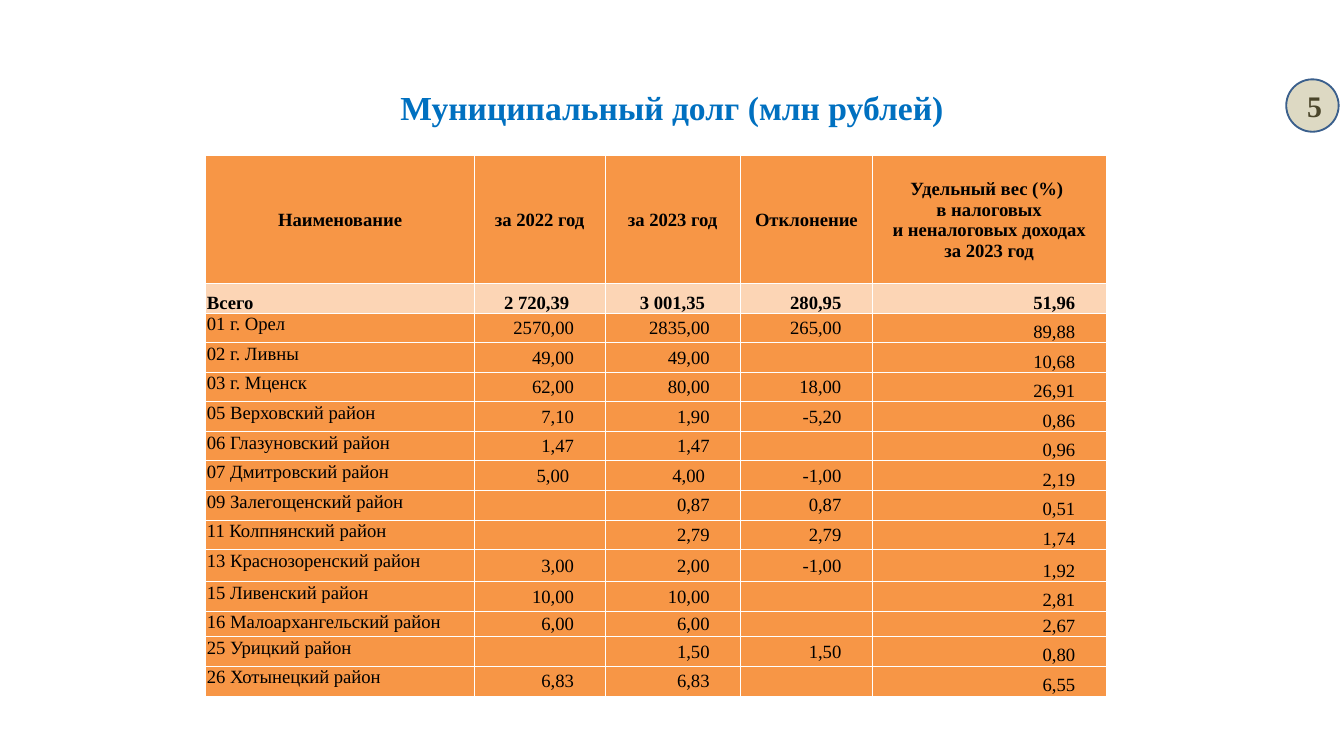
import pptx
import pptx.util
import pptx.dml.color
import pptx.enum.shapes
import pptx.enum.text
import pptx.oxml.ns
import lxml.etree

RGB = pptx.dml.color.RGBColor
ALIGN = pptx.enum.text.PP_ALIGN
ANCHOR = pptx.enum.text.MSO_ANCHOR
Inches = pptx.util.Inches
Pt = pptx.util.Pt
qn = pptx.oxml.ns.qn

FONT = "Times New Roman"
WHITE = RGB(0xFF, 0xFF, 0xFF)
BLACK = RGB(0x00, 0x00, 0x00)
BLUE = RGB(0x00, 0x70, 0xC0)
ORANGE = RGB(0xF7, 0x96, 0x46)
PEACH = RGB(0xFC, 0xD5, 0xB5)
BEIGE = RGB(0xDD, 0xD9, 0xC3)
BROWN = RGB(0x4A, 0x45, 0x2A)
NAVY = RGB(0x3A, 0x5F, 0x8C)

COLS = [2, 0.97, 1.01, 0.98, 1.74]
HEADER_HEIGHT = 0.95
ROW_HEIGHT = 0.22
SPECIAL_HEIGHTS = {10: 0.24, 12: 0.19}
HEADER = ["Наименование", "за 2022 год", "за 2023 год", "Отклонение",
          "Удельный вес (%) \vв налоговых\vи неналоговых доходах\vза 2023 год"]
ROWS = [
    ["Всего", "2 720,39 ", "3 001,35 ", "280,95", "51,96"],
    ["01 г. Орел", "2570,00", "2835,00", "265,00", "89,88"],
    ["02 г. Ливны", "49,00", "49,00", "", "10,68"],
    ["03 г. Мценск", "62,00", "80,00", "18,00", "26,91"],
    ["05 Верховский район", "7,10", "1,90", "-5,20", "0,86"],
    ["06 Глазуновский район", "1,47", "1,47", "", "0,96"],
    ["07 Дмитровский район", "5,00 ", "4,00 ", "-1,00", "2,19"],
    ["09 Залегощенский район", "", "0,87", "0,87", "0,51"],
    ["11 Колпнянский район", "", "2,79", "2,79", "1,74"],
    ["13 Краснозоренский район", "3,00", "2,00", "-1,00", "1,92"],
    ["15 Ливенский район", "10,00", "10,00", "", "2,81"],
    ["16 Малоархангельский район", "6,00", "6,00", "", "2,67"],
    ["25 Урицкий район", "", "1,50", "1,50", "0,80"],
    ["26 Хотынецкий район", "6,83", "6,83", "", "6,55"],
]


def write(tf, text, size=10, color=BLACK, bold=False, align=ALIGN.CENTER):
    """Write one formatted paragraph into a text frame."""
    p = tf.paragraphs[0]
    p.alignment = align
    for i, line in enumerate(text.split("\v")):
        if i:
            p.add_line_break()
        if line:
            r = p.add_run()
            r.text = line
            r.font.name = FONT
            r.font.size = Pt(size)
            r.font.bold = bold
            r.font.color.rgb = color
    end = lxml.etree.SubElement(p._p, qn("a:endParaRPr"))
    end.set("sz", str(size * 100))


def add_borders(cell, inner, color=WHITE, width=0.25):
    """Draw thin lines on the inner sides of a cell and none on the others."""
    tcPr = cell._tc.get_or_add_tcPr()
    for side in "LRTB":
        ln = lxml.etree.SubElement(tcPr, qn("a:ln" + side))
        ln.set("w", str(int(Pt(width))))
        if side in inner:
            fill = lxml.etree.SubElement(ln, qn("a:solidFill"))
            lxml.etree.SubElement(fill, qn("a:srgbClr")).set("val", str(color))
        else:
            lxml.etree.SubElement(ln, qn("a:noFill"))


def add_title(s, text, left, top, width, height):
    """Add the centred slide title."""
    tf = s.shapes.add_textbox(left, top, width, height).text_frame
    tf.word_wrap = True
    tf.auto_size = pptx.enum.text.MSO_AUTO_SIZE.SHAPE_TO_FIT_TEXT
    write(tf, text, size=18, color=BLUE, bold=True)


def add_page_number(s, text, left, top, width, height):
    """Add the round page number badge."""
    sp = s.shapes.add_shape(pptx.enum.shapes.MSO_SHAPE.OVAL, left, top, width, height)
    sp.shadow.inherit = False
    sp.fill.solid()
    sp.fill.fore_color.rgb = BEIGE
    sp.line.color.rgb = NAVY
    sp.line.width = Pt(1)
    sp.text_frame.vertical_anchor = ANCHOR.MIDDLE
    write(sp.text_frame, text, size=16, color=BROWN, bold=True)


def cell_format(row, col):
    """Return the anchor and alignment of a table cell."""
    if row == 0:
        return ANCHOR.MIDDLE, ALIGN.CENTER
    align = ALIGN.RIGHT if col else ALIGN.LEFT
    if row == 1 or col == len(COLS) - 1:
        return ANCHOR.BOTTOM, align
    return (ANCHOR.MIDDLE if col else ANCHOR.TOP), align


def inner_sides(row, col):
    """Return the sides of a cell that touch another cell."""
    return ("L" * (col > 0) + "R" * (col < len(COLS) - 1)
            + "T" * (row > 0) + "B" * (row < len(ROWS)))


def add_debt_table(s, left, top, width, height):
    """Add the municipal debt table, scaled to its box."""
    data = [HEADER] + ROWS
    heights = [HEADER_HEIGHT] + [SPECIAL_HEIGHTS.get(i, ROW_HEIGHT)
                                 for i in range(1, len(data))]
    table = s.shapes.add_table(len(data), len(COLS), left, top, width, height).table
    table.first_row = False
    table.horz_banding = False
    for column, share in zip(table.columns, COLS):
        column.width = int(width * share / sum(COLS))
    for row, share in zip(table.rows, heights):
        row.height = int(height * share / sum(heights))
    for i, values in enumerate(data):
        for j, text in enumerate(values):
            cell = table.cell(i, j)
            anchor, align = cell_format(i, j)
            add_borders(cell, inner_sides(i, j))
            cell.fill.solid()
            cell.fill.fore_color.rgb = PEACH if i == 1 else ORANGE
            cell.vertical_anchor = anchor
            cell.margin_left = cell.margin_top = Inches(0.01)
            cell.margin_right = Inches(0.23 if align == ALIGN.RIGHT else 0.01)
            cell.margin_bottom = 0
            write(cell.text_frame, text, bold=i < 2, align=align)


def main():
    """Build and save the slide."""
    prs = pptx.Presentation()
    prs.slide_width = Inches(10)
    prs.slide_height = prs.slide_width * 9 // 16
    s = prs.slides.add_slide(prs.slide_layouts[6])
    add_title(s, "Муниципальный долг (млн рублей)",
              Inches(2.32), Inches(0.6), Inches(5.36), Inches(0.4))
    add_page_number(s, "5", Inches(9.57), Inches(0.59), Inches(0.39), Inches(0.39))
    add_debt_table(s, Inches(1.53), Inches(1.16), Inches(6.7), Inches(4.02))
    prs.save("out.pptx")


if __name__ == "__main__":
    main()
